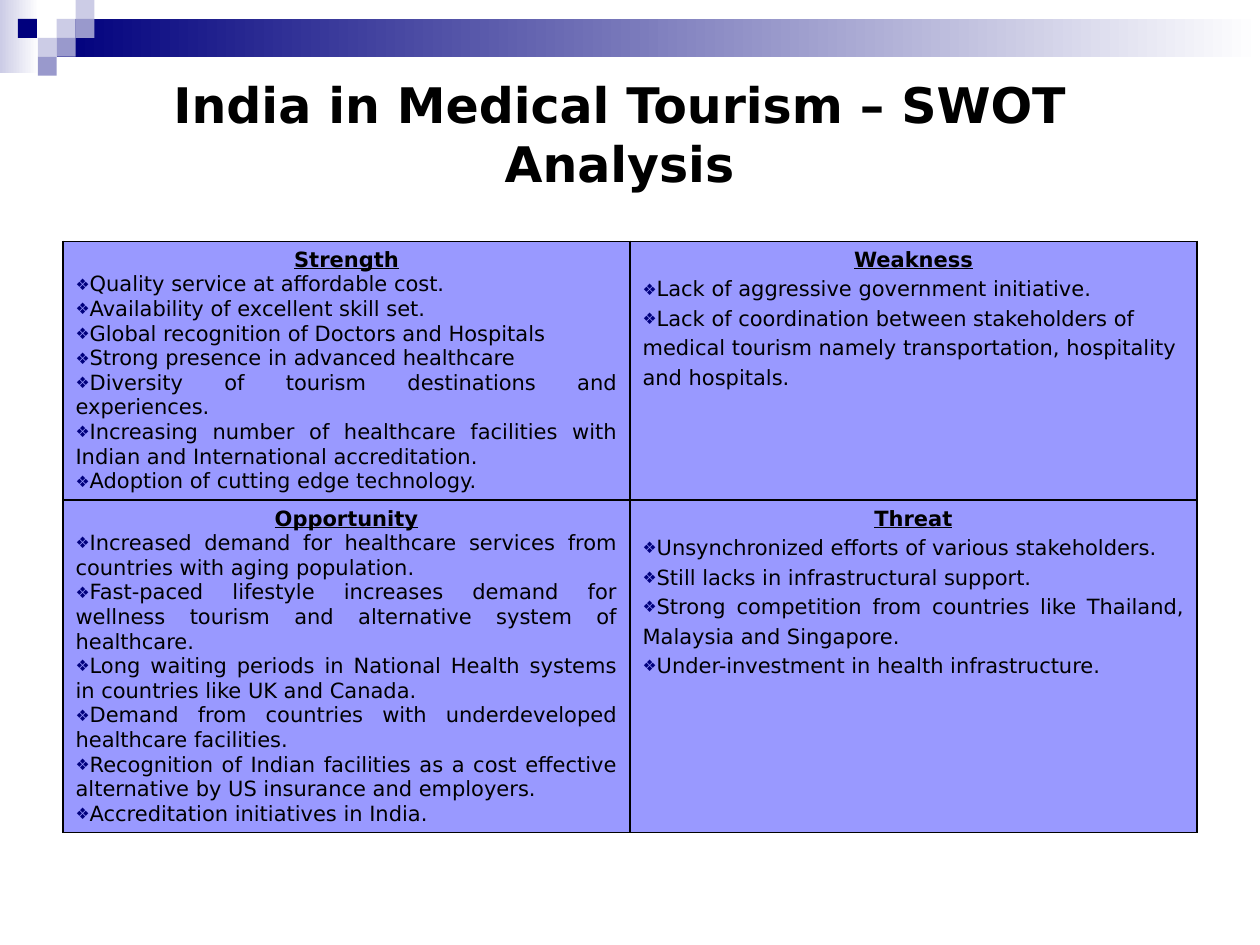
from dataclasses import dataclass

from lxml import etree
from pptx import Presentation
from pptx.dml.color import RGBColor as Rgb
from pptx.enum import shapes, text
from pptx.oxml import ns
from pptx.util import Pt


@dataclass(frozen=True)
class Theme:
    font: str = "DejaVu Sans"
    ink: str = "000000"
    navy: str = "00007D"
    mid: str = "9999CC"
    pale: str = "CCCCE6"
    white: str = "FFFFFF"
    cell: str = "9999FF"
    head: int = 28
    body: int = 12


THEME = Theme()
STEP = 10.8
TILES = [
    (3, 1, THEME.pale), (4, 0, THEME.pale), (4, 1, THEME.mid),
    (2, 2, THEME.pale), (0.95, 1, THEME.navy), (3, 2, THEME.mid),
    (2, 3, THEME.mid),
]
ALIGN = text.PP_ALIGN
SWOT = [
    [
        ("Strength", ALIGN.JUSTIFY, 1, [
            "Quality service at affordable cost.",
            "Availability of excellent skill set.",
            "Global recognition of Doctors and Hospitals",
            "Strong presence in advanced healthcare",
            "Diversity of tourism destinations and experiences.",
            "Increasing number of healthcare facilities with Indian and International accreditation.",
            "Adoption of cutting edge technology.",
        ]),
        ("Weakness", ALIGN.LEFT, 1.2, [
            "Lack of aggressive government initiative.",
            "Lack of coordination between stakeholders of medical tourism namely "
            "transportation, hospitality and hospitals.",
        ]),
    ],
    [
        ("Opportunity", ALIGN.JUSTIFY, 1, [
            "Increased demand for healthcare services from countries with aging population.",
            "Fast-paced lifestyle increases demand for wellness tourism and alternative "
            "system of healthcare.",
            "Long waiting periods in National Health systems in countries like UK and Canada.",
            "Demand from countries with underdeveloped healthcare facilities.",
            "Recognition of Indian facilities as a cost effective alternative by US "
            "insurance and employers.",
            "Accreditation initiatives in India.",
        ]),
        ("Threat", ALIGN.JUSTIFY, 1.2, [
            "Unsynchronized efforts of various stakeholders.",
            "Still lacks in infrastructural support.",
            "Strong competition from countries like Thailand, Malaysia and Singapore.",
            "Under-investment in health infrastructure.",
        ]),
    ],
]


def add_rect(slide, left, top, width, height):
    box = slide.shapes.add_shape(
        shapes.MSO_SHAPE.RECTANGLE, Pt(left), Pt(top), Pt(width), Pt(height))
    box.shadow.inherit = False
    box.line.fill.background()
    return box


def add_tile(slide, col, row, color):
    tile = add_rect(slide, col * STEP, row * STEP, STEP, STEP)
    tile.fill.solid()
    tile.fill.fore_color.rgb = Rgb.from_string(color)


def add_fade(slide, left, top, width, height, color):
    fill = add_rect(slide, left, top, width, height).fill
    fill.gradient()
    fill.gradient_angle = 0
    for stop, tone in zip(fill.gradient_stops, (color, THEME.white)):
        stop.color.rgb = Rgb.from_string(tone)


def set_font(para, size, bold=False, under=False):
    font = para.font
    font.name, font.size = THEME.font, Pt(size)
    font.bold, font.underline = bold, under
    font.color.rgb = Rgb.from_string(THEME.ink)


def add_node(parent, tag, **attrs):
    return etree.SubElement(parent, ns.qn(tag), attrs)


def set_bullet(para):
    props = para._p.get_or_add_pPr()
    props.set("marL", "0")
    props.set("indent", "0")
    color = add_node(props, "a:buClr")
    add_node(color, "a:srgbClr", val=THEME.navy)
    add_node(props, "a:buSzPct", val="75000")
    add_node(props, "a:buFont", typeface=THEME.font)
    add_node(props, "a:buChar", char="❖")


def set_edges(cell):
    props = cell._tc.get_or_add_tcPr()
    for spot, side in enumerate(("a:lnL", "a:lnR", "a:lnT", "a:lnB")):
        line = etree.Element(ns.qn(side), w=str(Pt(1)))
        fill = add_node(line, "a:solidFill")
        add_node(fill, "a:srgbClr", val=THEME.ink)
        props.insert(spot, line)


def fill_cell(cell, name, align, space, items):
    cell.fill.solid()
    cell.fill.fore_color.rgb = Rgb.from_string(THEME.cell)
    set_edges(cell)
    frame = cell.text_frame
    head = frame.paragraphs[0]
    head.text = name
    head.alignment = ALIGN.CENTER
    set_font(head, THEME.body, bold=True, under=True)
    for item in items:
        para = frame.add_paragraph()
        para.text = item
        para.alignment = align
        para.line_spacing = space
        set_bullet(para)
        set_font(para, THEME.body)


def add_swot(slide):
    table = slide.shapes.add_table(2, 2, Pt(36), Pt(138), Pt(648), Pt(305)).table
    table.first_row = table.horz_banding = False
    for row, height in zip(table.rows, (128, 177)):
        row.height = Pt(height)
    for r, line in enumerate(SWOT):
        for c, part in enumerate(line):
            fill_cell(table.cell(r, c), *part)


def set_title(slide):
    title = slide.shapes.title
    title.left, title.top = Pt(30), Pt(48)
    title.width, title.height = Pt(648), Pt(90)
    frame = title.text_frame
    frame.text = "India in Medical Tourism – SWOT Analysis\v"
    frame.word_wrap = True
    frame.auto_size = text.MSO_AUTO_SIZE.NONE
    frame.vertical_anchor = text.MSO_ANCHOR.MIDDLE
    para = frame.paragraphs[0]
    para.alignment = ALIGN.CENTER
    set_font(para, THEME.head, bold=True)


def main():
    deck = Presentation()
    deck.slide_width, deck.slide_height = Pt(720), Pt(540)
    slide = deck.slides.add_slide(deck.slide_layouts[5])
    add_fade(slide, 0, 0, 22.32, 41.76, THEME.pale)
    add_fade(slide, 3 * STEP, STEP, 720 - 3 * STEP, 2 * STEP, THEME.navy)
    for tile in TILES:
        add_tile(slide, *tile)
    add_swot(slide)
    set_title(slide)
    deck.save("out.pptx")


if __name__ == "__main__":
    main()
